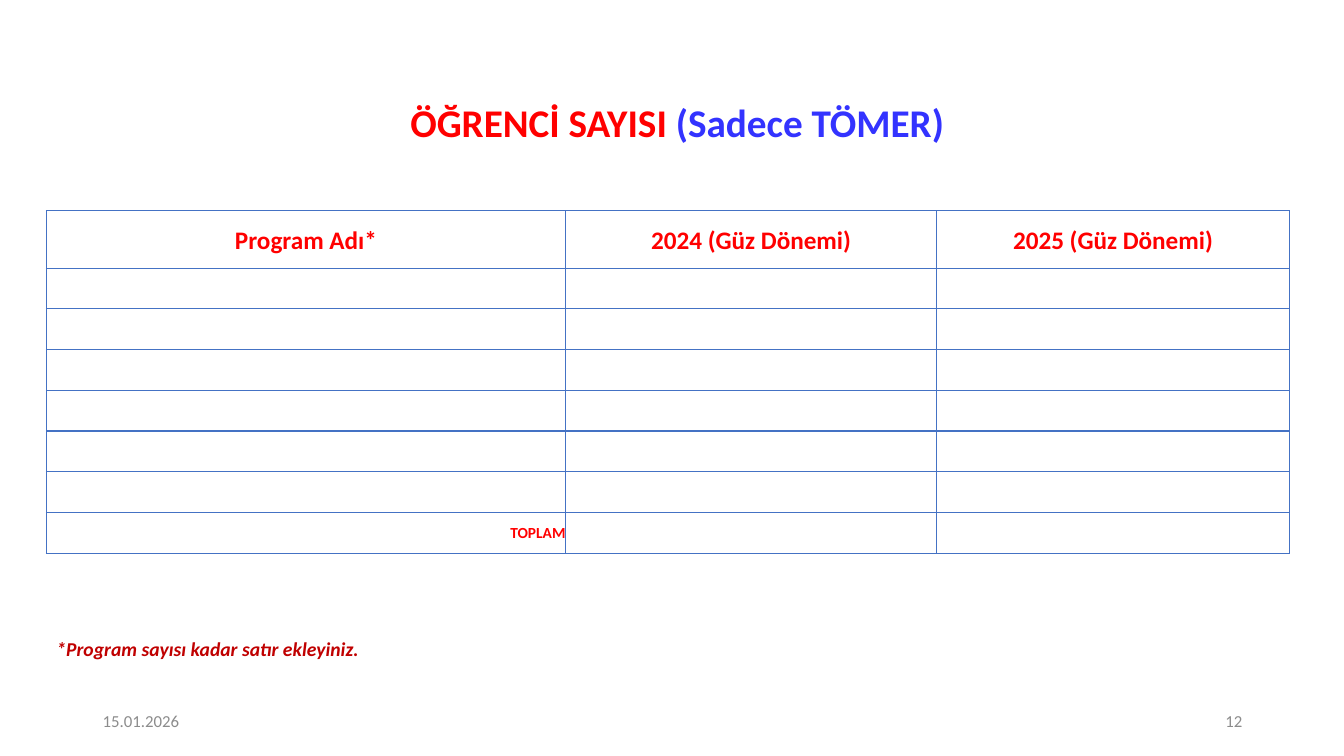
from lxml import etree
from pptx import Presentation
from pptx.dml.color import RGBColor
from pptx.enum.text import MSO_ANCHOR, PP_ALIGN
from pptx.oxml.ns import qn
from pptx.util import Inches, Pt

LEFT, CENTER, RIGHT = PP_ALIGN.LEFT, PP_ALIGN.CENTER, PP_ALIGN.RIGHT
TOP, MIDDLE = MSO_ANCHOR.TOP, MSO_ANCHOR.MIDDLE
RED = RGBColor(0xFF, 0x00, 0x00)
DARK_RED = RGBColor(0xC0, 0x00, 0x00)
BLUE = RGBColor(0x33, 0x33, 0xFF)
GRAY = RGBColor(0x8C, 0x8C, 0x8C)
BORDER = RGBColor(0x44, 0x72, 0xC4)
FONT = "Calibri"

COLUMN_WIDTHS = (5.15, 3.68, 3.5)
HEADINGS = ("Program Adı*", "2024 (Güz Dönemi)", "2025 (Güz Dönemi)")
HEADER_HEIGHT = 0.57
BODY_ROWS = 7


def add_span(para, text, size, color, bold=False, italic=False):
    span = para.add_run()
    span.text = text
    font = span.font
    font.name, font.size, font.bold, font.italic = FONT, Pt(size), bold, italic
    font.color.rgb = color


def add_text(page, box, spans, align=LEFT, anchor=MIDDLE, spacing=None, **style):
    """Place one paragraph in box; spans holds (text, color) pairs."""
    frame = page.shapes.add_textbox(*map(Inches, box)).text_frame
    frame.word_wrap = True
    frame.vertical_anchor = anchor
    para = frame.paragraphs[0]
    para.alignment = align
    para.line_spacing = spacing
    for text, color in spans:
        add_span(para, text, color=color, **style)


def set_borders(cell, color, width):
    properties = cell._tc.get_or_add_tcPr()
    for index, side in enumerate(("lnL", "lnR", "lnT", "lnB")):
        line = etree.Element(qn(f"a:{side}"), w=str(Pt(width)))
        fill = etree.SubElement(line, qn("a:solidFill"))
        etree.SubElement(fill, qn("a:srgbClr"), val=str(color))
        properties.insert(index, line)


def fill_cell(cell, text, size, align):
    para = cell.text_frame.paragraphs[0]
    para.alignment = align
    para.line_spacing = 1.07
    add_span(para, text, size, RED, bold=True)


def add_student_table(page, box):
    height = box[3]
    table = page.shapes.add_table(
        BODY_ROWS + 1, len(HEADINGS), *map(Inches, box)).table
    table.first_row = table.horz_banding = False
    for column, width in zip(table.columns, COLUMN_WIDTHS):
        column.width = Inches(width)
    for row in table.rows:
        row.height = Inches((height - HEADER_HEIGHT) / BODY_ROWS)
    table.rows[0].height = Inches(HEADER_HEIGHT)
    for cell in table.iter_cells():
        cell.margin_left = cell.margin_right = 0
        cell.margin_top = cell.margin_bottom = 0
        cell.vertical_anchor = MIDDLE
        cell.fill.background()
        set_borders(cell, BORDER, 1)
    for column, heading in enumerate(HEADINGS):
        fill_cell(table.cell(0, column), heading, 18, CENTER)
    fill_cell(table.cell(BODY_ROWS, 0), "\N{NO-BREAK SPACE}TOPLAM", 11, RIGHT)


def add_footer(page, box):
    left, top, width, height = box
    field_width = 3
    add_text(page, (left, top, field_width, height),
             [("15.01.2026", GRAY)], size=12)
    add_text(page, (left + width - field_width, top, field_width, height),
             [("12", GRAY)], align=RIGHT, size=12)


def main():
    deck = Presentation()
    deck.slide_width, deck.slide_height = Inches(13.33), Inches(7.5)
    page = deck.slides.add_slide(deck.slide_layouts[6])
    add_text(page, (0.73, 0.96, 12.06, 0.56),
             [("ÖĞRENCİ SAYISI ", RED), ("(Sadece TÖMER) ", BLUE)],
             align=CENTER, spacing=0.9, size=28, bold=True)
    add_student_table(page, (0.46, 2.09, sum(COLUMN_WIDTHS), 3.4))
    add_text(page, (0.46, 6.27, 8.48, 0.34),
             [("*Program sayısı kadar satır ekleyiniz.", DARK_RED)],
             anchor=TOP, size=14, bold=True, italic=True)
    add_footer(page, (0.92, 6.95, 11.5, 0.4))
    deck.save("out.pptx")


if __name__ == "__main__":
    main()
